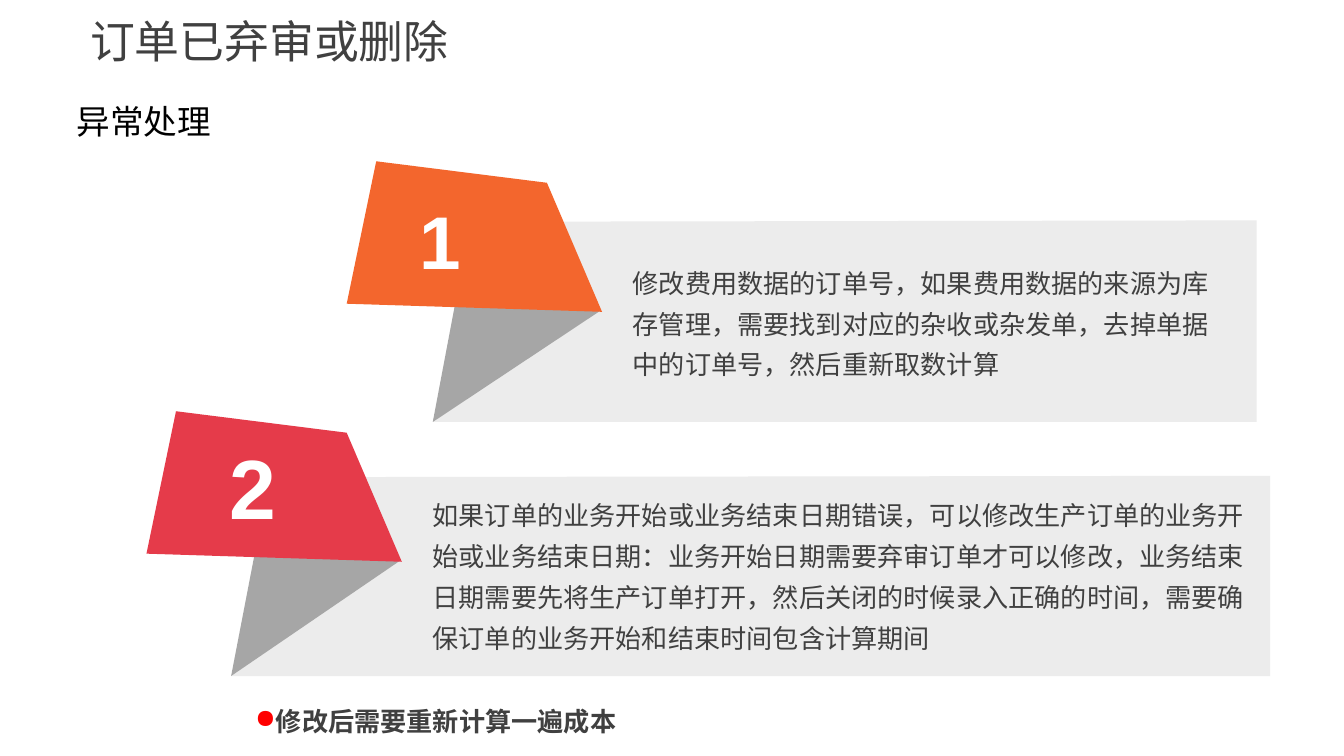
from lxml.etree import SubElement
from pptx import Presentation
from pptx.dml.color import RGBColor
from pptx.enum.text import MSO_ANCHOR, MSO_AUTO_SIZE, PP_ALIGN
from pptx.oxml.ns import qn
from pptx.util import Inches, Pt

deck = Presentation()
deck.slide_width = Inches(10)
deck.slide_height = deck.slide_width * 9 // 16
cell = deck.slide_width / 100  # the grid has 100 columns of square cells
slide = deck.slides.add_slide(deck.slide_layouts[5])
SANS = "Noto Sans CJK SC"
GREY = "404040"


def draw(points, color, alpha=None):
    """Draw a closed outline through grid points."""
    spots = [(round(x * cell), round(y * cell)) for x, y in points]
    pen = slide.shapes.build_freeform(*spots[0], scale=1.0)
    pen.add_line_segments(spots[1:], close=True)
    shape = pen.convert_to_shape()
    shape.shadow.inherit = False
    shape.line.fill.background()
    shape.fill.solid()
    shape.fill.fore_color.rgb = RGBColor.from_string(color)
    if alpha:
        tint = shape.fill._xPr.find(".//" + qn("a:srgbClr"))
        SubElement(tint, qn("a:alpha"), val=str(alpha * 1000))


def write(place, text, size, font=SANS, color=GREY, bold=False,
          space=None, wrap=True, box=None, dot=None):
    """Put one run of text at left, top, width, height in cells."""
    box = box or slide.shapes.add_textbox(0, 0, 0, 0)
    box.left, box.top, box.width, box.height = [round(n * cell) for n in place]
    frame = box.text_frame
    frame.word_wrap = wrap
    frame.auto_size = MSO_AUTO_SIZE.NONE
    if not wrap:
        frame.margin_left = frame.margin_right = Inches(0.07)
        frame.margin_top = frame.margin_bottom = Inches(0.04)
    para = frame.paragraphs[0]
    para.alignment = PP_ALIGN.LEFT
    if space:
        para.line_spacing = space
    if dot:
        props = para._p.get_or_add_pPr()
        tint = SubElement(props, qn("a:buClr"))
        SubElement(tint, qn("a:srgbClr"), val=dot)
        SubElement(props, qn("a:buChar"), char="●")
    run = para.add_run()
    run.text = text
    run.font.size = Pt(size)
    run.font.bold = bold
    run.font.name = font
    run.font.color.rgb = RGBColor.from_string(color)
    if font == SANS:
        SubElement(run._r.get_or_add_rPr(), qn("a:ea"), typeface=font)


# Title and heading
title = slide.shapes.title
title.text_frame.vertical_anchor = MSO_ANCHOR.MIDDLE
write((5.7, 0.3, 90, 5.5), "订单已弃审或删除", 24, box=title)
write((4.7, 7, 17.2, 4), "异常处理", 18, font="Calibri", color="000000")

# Cards: flag corner, flag colour, band (top left, right, top, bottom left,
# bottom), number, number size and place, text and place
cards = [
    (25.8, 12, "F3662D", (36.9, 93.5, 16.4, 32.2, 31.4),
     "1", 40, (30.5, 14.1, 4.6, 7.5),
     "修改费用数据的订单号，如果费用数据的来源为库存管理，需要找到对应的杂收或杂发单，"
     "去掉单据中的订单号，然后重新取数计算", (46.1, 18.7, 45.7, 10.2)),
    (10.9, 30.6, "E53B4A", (23.1, 94.5, 35.4, 17.2, 50.3),
     "2", 45, (16.4, 32, 5, 8.3),
     "如果订单的业务开始或业务结束日期错误，可以修改生产订单的业务开始或业务结束日期："
     "业务开始日期需要弃审订单才可以修改，业务结束日期需要先将生产订单打开，"
     "然后关闭的时候录入正确的时间，需要确保订单的业务开始和结束时间包含计算期间",
     (31.2, 36, 63.3, 13.3)),
]
for x, y, hue, band, mark, size, spot, text, place in cards:
    start, right, top, left, low = band
    draw([(start, top + 0.1), (right, top), (right, low), (left, low)],
         "D9D9D9", alpha=49)
    draw([(x + 18.9, y + 11.1), (x + 8.5, y + 8.3), (left, low)], "A6A6A6")
    draw([(x + 2.2, y), (x + 14.9, y + 1.6), (x + 19, y + 11.2),
          (x, y + 10.6)], hue)
    write(spot, mark, size, font="Arial", color="FFFFFF", bold=True,
          wrap=False)
    write(place, text, 14, space=1.3)

# Closing note
write((18, 50.8, 34.4, 4.1), "修改后需要重新计算一遍成本", 14, bold=True,
      space=1.5, dot="FF0000")

deck.save("out.pptx")
